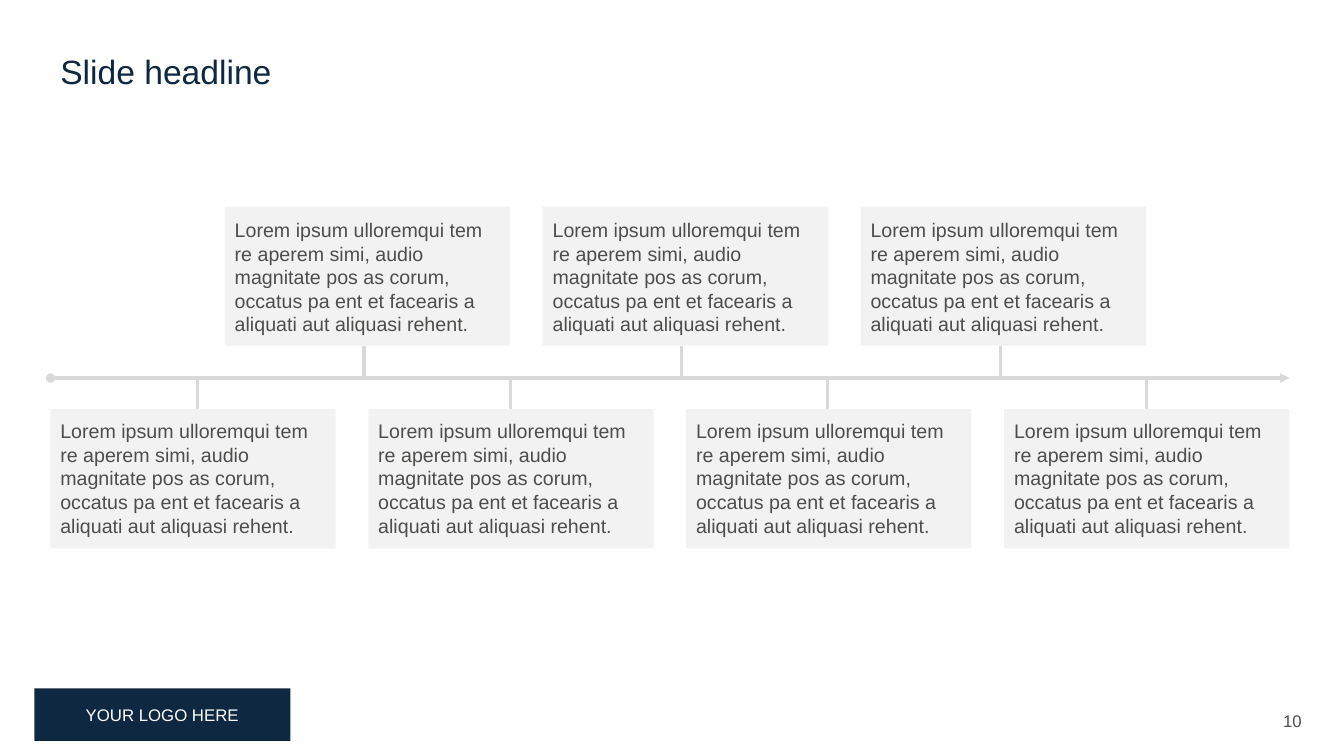
import pptx
import pptx.util
from lxml import etree
from pptx.dml.color import RGBColor
from pptx.enum.shapes import MSO_CONNECTOR, MSO_SHAPE
from pptx.enum.text import MSO_ANCHOR, PP_ALIGN
from pptx.oxml.ns import qn
from pptx.util import Inches, Pt

NAVY = RGBColor(0x0E, 0x28, 0x41)
GREY_TEXT = RGBColor(0x4D, 0x4E, 0x4C)
GREY_LINE = RGBColor(0xD9, 0xD9, 0xD9)
GREY_CARD = RGBColor(0xF2, 0xF2, 0xF2)
WHITE = RGBColor(0xFF, 0xFF, 0xFF)

CARD_TEXT = ("Lorem ipsum ulloremqui tem re aperem simi, audio magnitate pos as corum, "
             "occatus pa ent et facearis a aliquati aut aliquasi rehent.")
CARD_WIDTH, CARD_HEIGHT = 2.83, 1.38
PITCH = 3.153
UPPER_OFFSET = 1.73
STEM = 0.32
LOWER_STEMS = (1.46, 4.56, 7.71, 10.87)
UPPER_STEMS = (3.11, 6.26, 9.42)


def add_text(page, box, text, size, color, fill=None,
             anchor=MSO_ANCHOR.TOP, align=PP_ALIGN.LEFT):
    """Add a text box, or a filled rectangle when fill is given."""
    lengths = [Inches(length) for length in box]
    if fill is None:
        shape = page.shapes.add_textbox(*lengths)
    else:
        shape = page.shapes.add_shape(MSO_SHAPE.RECTANGLE, *lengths)
        shape.shadow.inherit = False
        shape.fill.solid()
        shape.fill.fore_color.rgb = fill
        shape.line.fill.background()
    frame = shape.text_frame
    frame.word_wrap = True
    frame.vertical_anchor = anchor
    frame.text = text
    para = frame.paragraphs[0]
    para.alignment = align
    para.font.name = "Arial"
    para.font.size = Pt(size)
    para.font.color.rgb = color
    return shape


def add_line(page, start, end):
    line = page.shapes.add_connector(
        MSO_CONNECTOR.STRAIGHT, *[Inches(length) for length in (*start, *end)])
    line.line.color.rgb = GREY_LINE
    line.line.width = Pt(2.25)
    etree.SubElement(line.element.spPr, qn("a:effectLst"))
    return line


def add_card(page, left, top, anchor):
    card = add_text(page, (left, top, CARD_WIDTH, CARD_HEIGHT), CARD_TEXT, 14,
                    GREY_TEXT, GREY_CARD, anchor)
    frame = card.text_frame
    frame.margin_left = frame.margin_right = Inches(0.1)
    frame.margin_top = frame.margin_bottom = Inches(0.1)


def add_timeline(page, left, axis, width):
    """Draw the arrow at height axis, with stems and cards on both sides."""
    arrow = add_line(page, (left, axis), (left + width, axis))
    outline = arrow.line._get_or_add_ln()
    for tag, kind in (("a:headEnd", "oval"), ("a:tailEnd", "triangle")):
        etree.SubElement(outline, qn(tag), type=kind)
    rows = (
        (LOWER_STEMS, 0, STEM, axis + STEM - 0.01, MSO_ANCHOR.TOP),
        (UPPER_STEMS, UPPER_OFFSET, -STEM, axis - STEM - CARD_HEIGHT, MSO_ANCHOR.BOTTOM),
    )
    for stems, offset, reach, top, anchor in rows:
        for column, stem in enumerate(stems):
            add_line(page, (left + stem, axis), (left + stem, axis + reach))
            add_card(page, left + offset + column * PITCH, top, anchor)


def add_headline(page, box):
    headline = add_text(page, box, "Slide headline", 24, NAVY)
    headline.text_frame.paragraphs[0].line_spacing = 0.9


def add_footer(page, logo_box, number_box):
    add_text(page, logo_box, "YOUR LOGO HERE", 12, WHITE, NAVY,
             MSO_ANCHOR.MIDDLE, PP_ALIGN.CENTER)
    add_text(page, number_box, "10", 12, GREY_TEXT,
             anchor=MSO_ANCHOR.MIDDLE, align=PP_ALIGN.RIGHT)


def main():
    deck = pptx.Presentation()
    deck.slide_width, deck.slide_height = Inches(13.33), Inches(7.5)
    page = deck.slides.add_slide(deck.slide_layouts[6])
    add_headline(page, (0.5, 0.5, 11.97, 0.59))
    add_timeline(page, 0.5, 3.75, 12.29)
    add_footer(page, (0.34, 6.83, 2.54, 0.52), (10.01, 6.95, 3, 0.4))
    deck.save("out.pptx")


if __name__ == "__main__":
    main()
